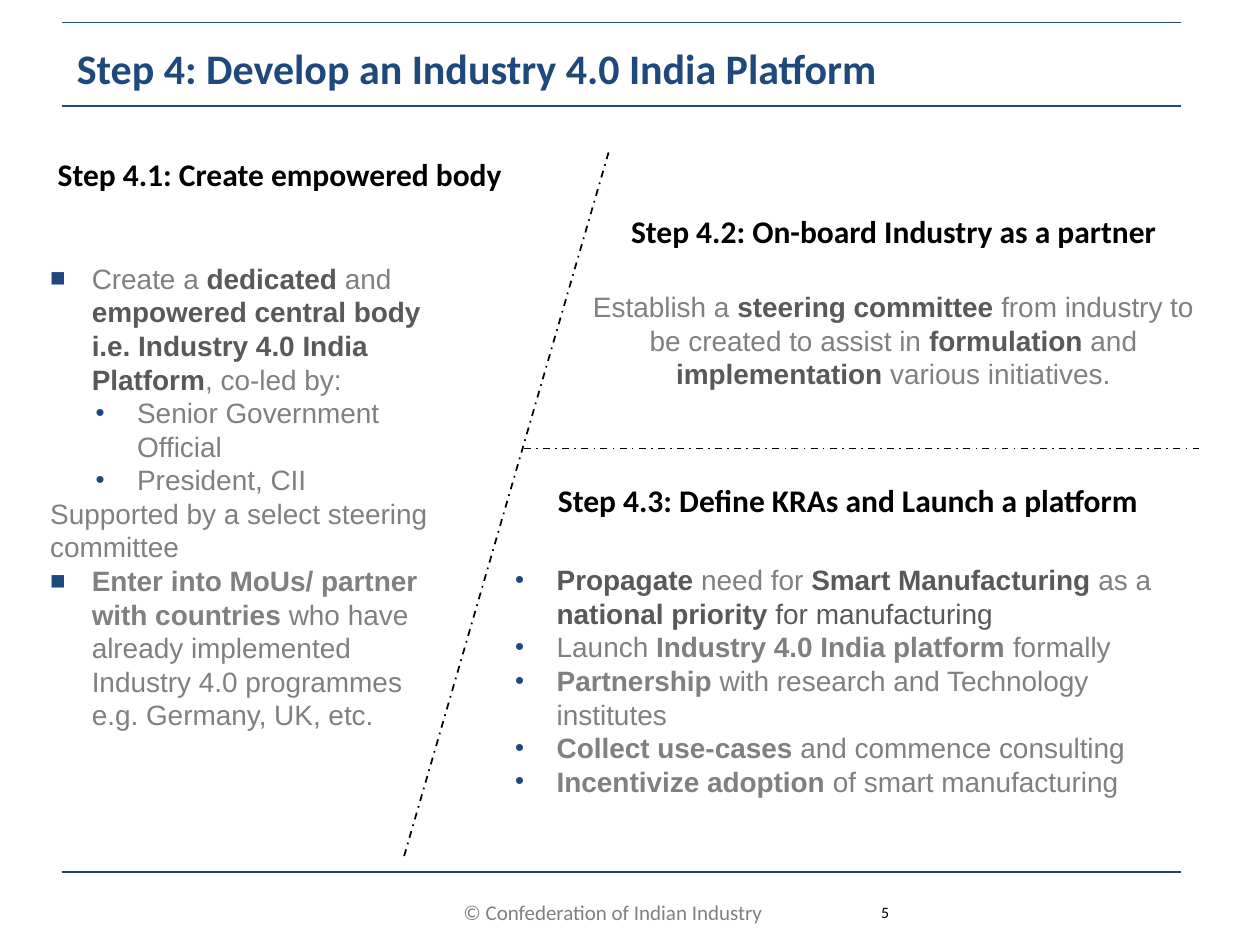
from lxml import etree
from pptx import Presentation
from pptx import util as u
from pptx.dml import color
from pptx.enum import dml, shapes, text
from pptx.oxml import ns

NAVY, GREY, DARK, BLACK = "1F497D", "808080", "595959", "000000"
PLAIN, BOLD = (GREY, False), (GREY, True)
DARK_PLAIN, DARK_BOLD = (DARK, False), (DARK, True)
LEFT, CENTER = text.PP_ALIGN.LEFT, text.PP_ALIGN.CENTER
TOP, MIDDLE = text.MSO_ANCHOR.TOP, text.MSO_ANCHOR.MIDDLE

EMPOWERED_BODY = [
    ("■", 0.33, [("Create a ", PLAIN), ("dedicated ", DARK_BOLD), ("and ", PLAIN),
                 ("empowered central body i.e. Industry 4.0 India Platform", DARK_BOLD),
                 (", co-led by:", PLAIN)]),
    ("•", 0.69, [("Senior Government Official", PLAIN)]),
    ("•", 0.69, [("President, CII", PLAIN)]),
    (None, 0, [("Supported by a select steering committee", PLAIN)]),
    ("■", 0.33, [("Enter into MoUs/ partner with countries ", BOLD),
                 ("who have already implemented Industry 4.0 programmes "
                  "e.g. Germany, UK, etc.", PLAIN)]),
]
INDUSTRY_PARTNER = [
    (None, 0, [("Establish a ", PLAIN), ("steering committee ", DARK_BOLD),
               ("from industry to be created to assist in ", PLAIN),
               ("formulation ", DARK_BOLD), ("and ", PLAIN),
               ("implementation ", DARK_BOLD), ("various initiatives.", PLAIN)]),
]
PLATFORM_LAUNCH = [
    ("•", 0.33, [("Propagate ", DARK_BOLD), ("need for ", PLAIN),
                 ("Smart Manufacturing", DARK_BOLD), (" as a ", PLAIN),
                 ("national priority ", DARK_BOLD), ("for manufacturing", DARK_PLAIN)]),
    ("•", 0.33, [("Launch ", PLAIN), ("Industry 4.0 India platform ", BOLD),
                 ("formally", PLAIN)]),
    ("•", 0.33, [("Partnership", BOLD),
                 (" with research and Technology institutes", PLAIN)]),
    ("•", 0.33, [("Collect use-cases ", BOLD), ("and commence consulting", PLAIN)]),
    ("•", 0.33, [("Incentivize adoption", BOLD), (" of smart manufacturing", PLAIN)]),
]


def rgb(value):
    return color.RGBColor.from_string(value)


def inches(*lengths):
    return [u.Inches(length) for length in lengths]


def add_span(para, words, size, font, hue, bold=False):
    span = para.add_run()
    span.text = words
    span.font.size = u.Pt(size)
    span.font.name = font
    span.font.bold = bold
    span.font.color.rgb = rgb(hue)


def add_bullet(para, mark, margin):
    props = para._p.get_or_add_pPr()
    props.set("marL", str(u.Inches(margin)))
    props.set("indent", str(-u.Inches(0.33)))
    tint = etree.SubElement(props, ns.qn("a:buClr"))
    etree.SubElement(tint, ns.qn("a:srgbClr"), val=NAVY)
    etree.SubElement(props, ns.qn("a:buSzPct"), val="92000")
    etree.SubElement(props, ns.qn("a:buFont"), typeface="Arial")
    etree.SubElement(props, ns.qn("a:buChar"), char=mark)


def add_frame(page, box, anchor):
    frame = page.shapes.add_textbox(*inches(*box)).text_frame
    frame.word_wrap = True
    frame.vertical_anchor = anchor
    return frame


def add_label(page, box, words, size, hue, bold=False, align=LEFT, anchor=TOP):
    para = add_frame(page, box, anchor).paragraphs[0]
    para.alignment = align
    add_span(para, words, size, "Calibri", hue, bold)


def add_body(page, box, items, align=LEFT):
    frame = add_frame(page, box, MIDDLE)
    for index, (mark, margin, spans) in enumerate(items):
        para = frame.add_paragraph() if index else frame.paragraphs[0]
        para.alignment = align
        if mark:
            add_bullet(para, mark, margin)
        for words, (hue, bold) in spans:
            add_span(para, words, 16, "Arial", hue, bold)


def add_step(page, heading_box, heading, body_box, items, align=LEFT):
    add_body(page, body_box, items, align)
    add_label(page, heading_box, heading, 18, BLACK, bold=True)


def add_rule(page, start, end, hue, dash=None):
    rule = page.shapes.add_connector(shapes.MSO_CONNECTOR.STRAIGHT, *inches(*start, *end))
    rule.line.color.rgb = rgb(hue)
    rule.line.width = u.Pt(1)
    if dash:
        rule.line.dash_style = dash
    etree.SubElement(rule._element.spPr, ns.qn("a:effectLst"))


def add_title_band(page, box):
    table = page.shapes.add_table(1, 1, *inches(*box)).table
    table.first_row = table.horz_banding = False
    cell = table.cell(0, 0)
    props = cell._tc.get_or_add_tcPr()
    for side in ("lnL", "lnR", "lnT", "lnB"):
        edge = etree.SubElement(props, ns.qn("a:" + side), w=str(u.Pt(1)))
        if side in ("lnT", "lnB"):
            fill = etree.SubElement(edge, ns.qn("a:solidFill"))
            etree.SubElement(fill, ns.qn("a:srgbClr"), val=NAVY)
        else:
            etree.SubElement(edge, ns.qn("a:noFill"))
    cell.fill.background()


def place_title(page, box, words):
    title = page.shapes.title
    title.left, title.top, title.width, title.height = inches(*box)
    frame = title.text_frame
    frame.auto_size = text.MSO_AUTO_SIZE.NONE
    frame.vertical_anchor = TOP
    frame.paragraphs[0].alignment = LEFT
    add_span(frame.paragraphs[0], words, 24, "Calibri", NAVY, True)


def add_footer(page, left, top, width):
    add_rule(page, (left, top), (left + width, top), "1C4270")
    add_label(page, (3.55, top + 0.17, 2.63, 0.3),
              "© Confederation of Indian Industry", 12, GREY, align=CENTER)
    add_label(page, (6.71, top + 0.12, 0.63, 0.4), "5", 9, BLACK,
              align=CENTER, anchor=MIDDLE)


def main():
    deck = Presentation()
    deck.slide_width, deck.slide_height = inches(10, 7.5)
    page = deck.slides.add_slide(deck.slide_layouts[5])

    add_title_band(page, (0.49, 0.18, 8.88, 0.66))
    place_title(page, (0.51, 0.29, 9.34, 0.5),
                "Step 4: Develop an Industry 4.0 India Platform")
    add_step(page, (0.36, 1.18, 3.97, 0.4), "Step 4.1: Create empowered body",
             (0.3, 1.39, 3.28, 5.1), EMPOWERED_BODY)
    add_step(page, (4.91, 1.63, 4.71, 0.4), "Step 4.2: On-board Industry as a partner",
             (4.48, 2.07, 5.22, 1.26), INDUSTRY_PARTNER, CENTER)
    add_step(page, (4.33, 3.77, 5.19, 0.4), "Step 4.3: Define KRAs and Launch a platform",
             (3.99, 4.23, 5.64, 2.34), PLATFORM_LAUNCH)
    dash_dot = dml.MSO_LINE.DASH_DOT
    add_rule(page, (4.83, 1.21), (3.2, 6.82), BLACK, dash_dot)
    add_rule(page, (9.52, 3.56), (4.15, 3.56), BLACK, dash_dot)
    add_footer(page, 0.49, 6.92, 8.88)
    deck.save("out.pptx")


if __name__ == "__main__":
    main()
